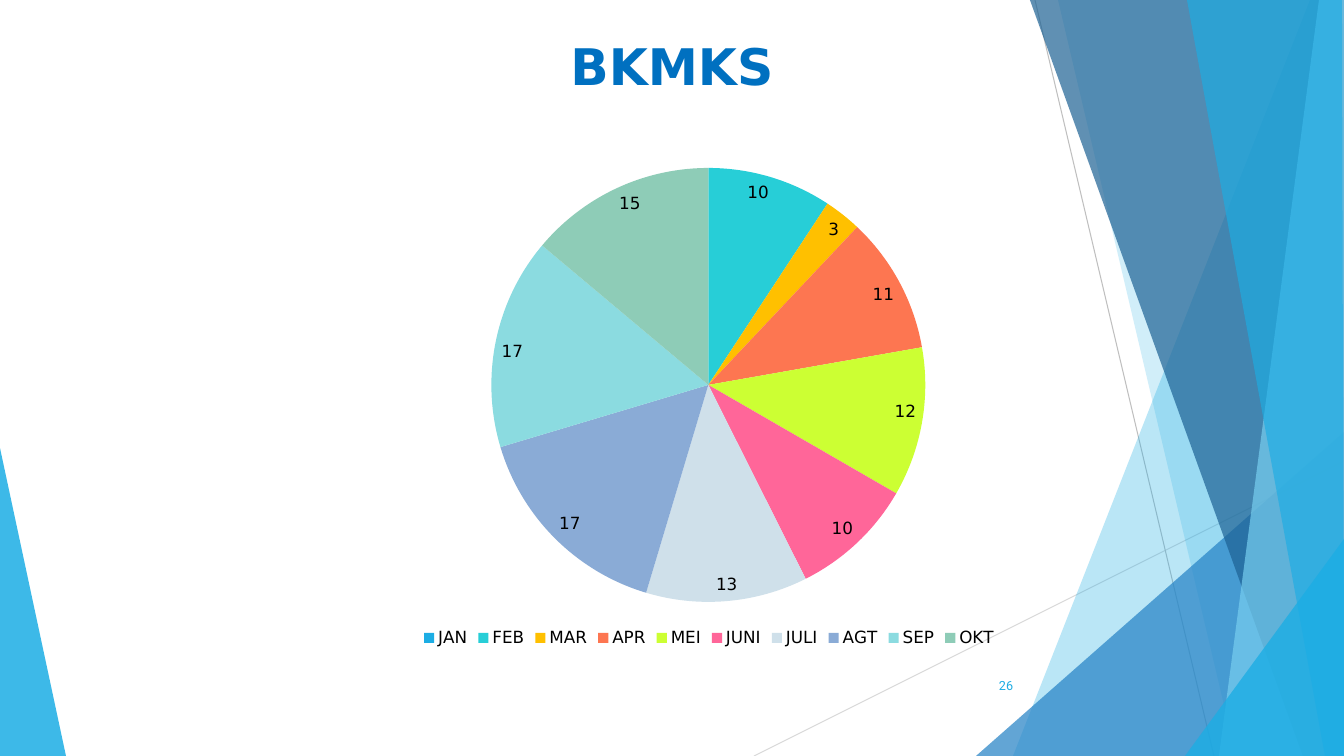
"""Build the BKMKS slide: a monthly pie chart on a faceted blue background."""
from lxml import etree
from pptx import Presentation
from pptx.chart.data import CategoryChartData
from pptx.dml.color import RGBColor
from pptx.enum.chart import XL_CHART_TYPE, XL_LABEL_POSITION, XL_LEGEND_POSITION
from pptx.enum.text import MSO_ANCHOR, PP_ALIGN
from pptx.oxml import parse_xml
from pptx.oxml.ns import nsdecls, qn
from pptx.util import Pt

PIE = XL_CHART_TYPE.PIE
INSIDE_END = XL_LABEL_POSITION.INSIDE_END
BOTTOM = XL_LEGEND_POSITION.BOTTOM
TOP, MIDDLE = MSO_ANCHOR.TOP, MSO_ANCHOR.MIDDLE
CENTER, RIGHT = PP_ALIGN.CENTER, PP_ALIGN.RIGHT

SCALE = 914400 / 100.8
WIDTH, HEIGHT = 1344, 756
COLORS = {
    "sky": "1CADE4", "blue": "2683C6", "navy": "1D6294", "pale": "77CEEF",
    "title": "0070C0", "text": "000000", "grey": "BFBFBF", "light grey": "D9D9D9",
}
HEADING = "BKMKS"
PAGE = "26"
MONTHS = [
    ("JAN", 0, "1CADE4"), ("FEB", 10, "27CED7"), ("MAR", 3, "FFC000"),
    ("APR", 11, "FD7651"), ("MEI", 12, "CCFF33"), ("JUNI", 10, "FF6699"),
    ("JULI", 13, "CFE0EA"), ("AGT", 17, "8AABD6"), ("SEP", 17, "8BDBE0"),
    ("OKT", 15, "8ECCB7"),
]
LEFT_FACET = ("sky", 85, [(0, 448), (66, 756), (0, 756)])
RAYS = [("light grey", (754, 756), (1344, 461)), ("grey", (1035, 0), (1214, 756))]
RIGHT_FACETS = [
    ("sky", 30, [(1310, 0), (1013, 756), (1344, 756), (1344, 0)]),
    ("sky", 20, [(1058, 0), (1236, 756), (1344, 756), (1344, 0)]),
    ("blue", 72, [(976, 756), (1344, 432), (1344, 756)]),
    ("navy", 70, [(1030, 0), (1303, 756), (1344, 756), (1344, 0)]),
    ("pale", 70, [(1319, 0), (1219, 756), (1344, 756), (1344, 0)]),
    ("sky", 65, [(1187, 0), (1325, 756), (1344, 756), (1342, 0)]),
    ("sky", 80, [(1185, 756), (1344, 539), (1344, 756)]),
]
TITLE_BOX = (67, 30, 1210, 126)
CHART_BOX = (104, 152, 1210, 500)
PIE_BOX = (491, 168, 434, 434)
PAGE_BOX = (947, 666, 76, 40)


def px(*lengths):
    return [round(length * SCALE) for length in lengths]


def rgb(name):
    return RGBColor.from_string(COLORS[name])


def style(font, color, **values):
    for key, value in values.items():
        setattr(font, key, value)
    font.color.rgb = rgb(color)


def add_facet(shapes, color, opacity, corners):
    builder = shapes.build_freeform(*corners[0], scale=SCALE)
    builder.add_line_segments(corners[1:], close=True)
    facet = builder.convert_to_shape()
    facet.shadow.inherit = False
    facet.line.fill.background()
    facet.fill.solid()
    facet.fill.fore_color.rgb = rgb(color)
    tone = facet.fill._xPr.find(".//" + qn("a:srgbClr"))
    etree.SubElement(tone, qn("a:alpha"), val=str(opacity * 1000))


def add_ray(shapes, color, start, end):
    ray = shapes.add_connector(1, *px(*start, *end))
    ray.line.color.rgb = rgb(color)
    ray.line.width = Pt(0.75)
    etree.SubElement(ray._element.spPr, qn("a:effectLst"))


def add_text(frame, text, anchor, align, color, **values):
    frame.word_wrap = True
    frame.vertical_anchor = anchor
    paragraph = frame.paragraphs[0]
    paragraph.alignment = align
    run = paragraph.add_run()
    run.text = text
    style(run.font, color, **values)


def place_pie(chart):
    left, top, width, height = CHART_BOX
    pie_left, pie_top, pie_width, pie_height = PIE_BOX
    fractions = {
        "x": (pie_left - left) / width, "y": (pie_top - top) / height,
        "w": pie_width / width, "h": pie_height / height,
    }
    sizes = "".join(f'<c:{key} val="{value:.3f}"/>' for key, value in fractions.items())
    layout = parse_xml(
        f'<c:layout {nsdecls("c")}><c:manualLayout><c:layoutTarget val="inner"/>'
        f'<c:xMode val="edge"/><c:yMode val="edge"/>{sizes}</c:manualLayout></c:layout>'
    )
    area = chart._chartSpace.find(".//" + qn("c:plotArea"))
    for old in area.findall(qn("c:layout")):
        area.remove(old)
    area.insert(0, layout)


def add_pie(shapes):
    data = CategoryChartData()
    data.categories = [month for month, _, _ in MONTHS]
    data.add_series("Series 1", [value for _, value, _ in MONTHS])
    chart = shapes.add_chart(PIE, *px(*CHART_BOX), data).chart
    style(chart.font, "text", name="Roboto", size=Pt(18))
    chart.has_title = False
    chart.has_legend = True
    chart.legend.position = BOTTOM
    chart.legend.include_in_layout = False
    style(chart.legend.font, "text", name="DejaVu Sans", size=Pt(12))
    plot = chart.plots[0]
    plot.vary_by_categories = True
    for index, (_, _, color) in enumerate(MONTHS):
        fill = plot.series[0].points[index].format.fill
        fill.solid()
        fill.fore_color.rgb = RGBColor.from_string(color)
    labels = plot.series[0].data_labels
    labels.show_value = True
    labels.position = INSIDE_END
    labels.number_format = "0;;;"
    labels.number_format_is_linked = False
    style(labels.font, "text", name="DejaVu Sans", size=Pt(12))
    place_pie(chart)


def main():
    deck = Presentation()
    deck.slide_width, deck.slide_height = px(WIDTH, HEIGHT)
    slide = deck.slides.add_slide(deck.slide_layouts[5])
    shapes = slide.shapes
    add_facet(shapes, *LEFT_FACET)
    for ray in RAYS:
        add_ray(shapes, *ray)
    for facet in RIGHT_FACETS:
        add_facet(shapes, *facet)
    title = shapes.title
    title.left, title.top, title.width, title.height = px(*TITLE_BOX)
    add_text(title.text_frame, HEADING, TOP, CENTER, "title",
             name="DejaVu Sans", size=Pt(36), bold=True)
    add_pie(shapes)
    page = shapes.add_textbox(*px(*PAGE_BOX))
    add_text(page.text_frame, PAGE, MIDDLE, RIGHT, "sky", name="Roboto", size=Pt(9))
    deck.save("out.pptx")


if __name__ == "__main__":
    main()
